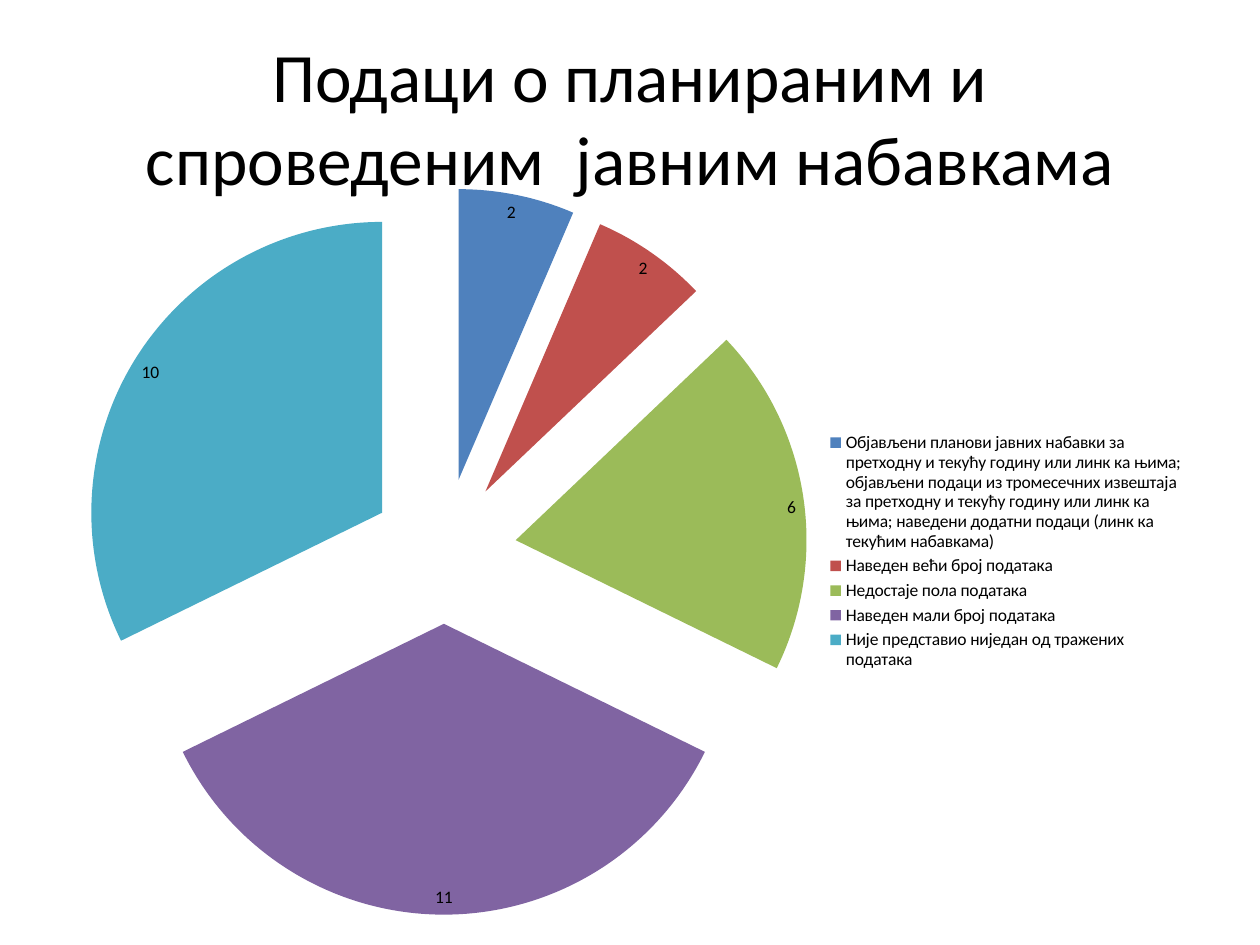
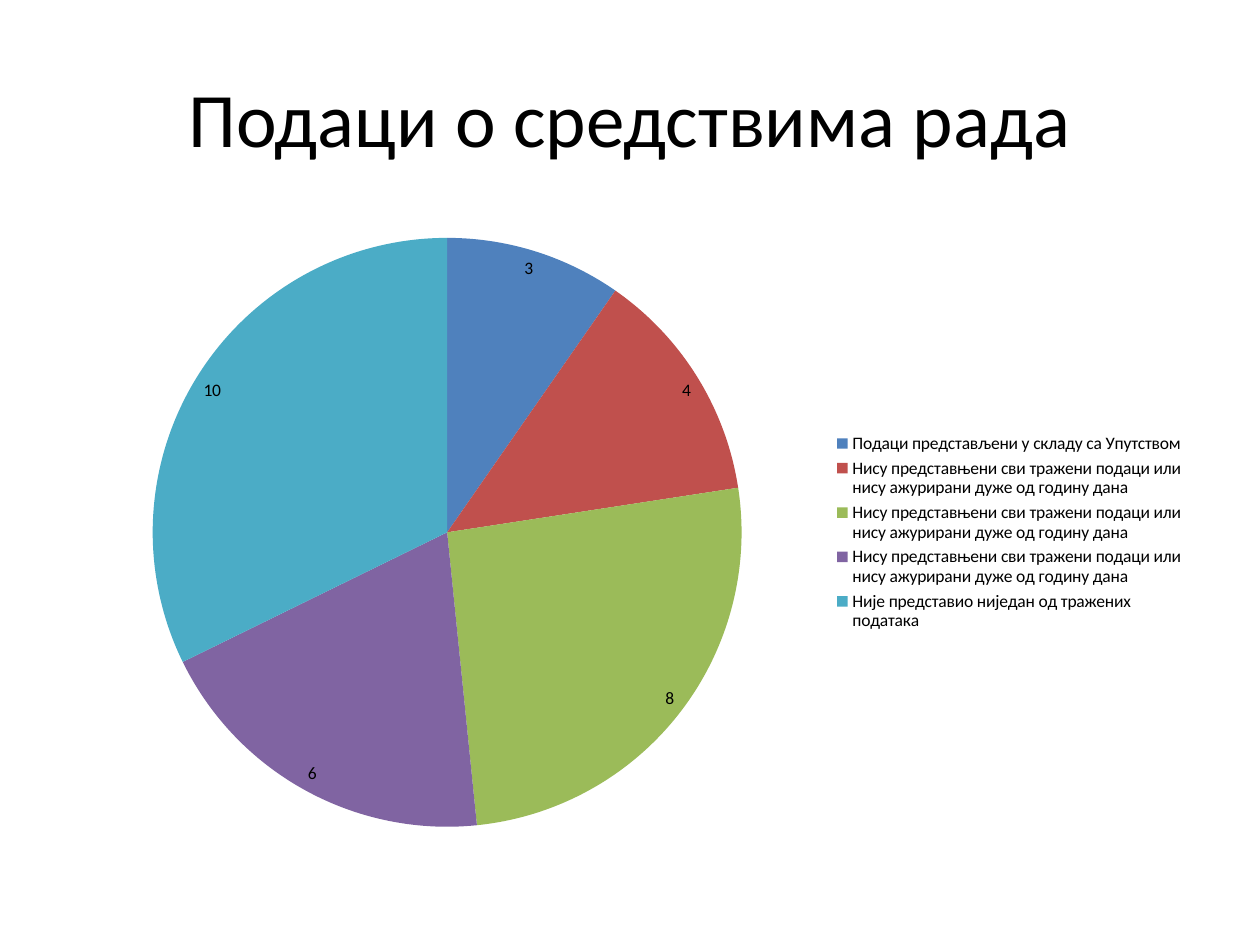
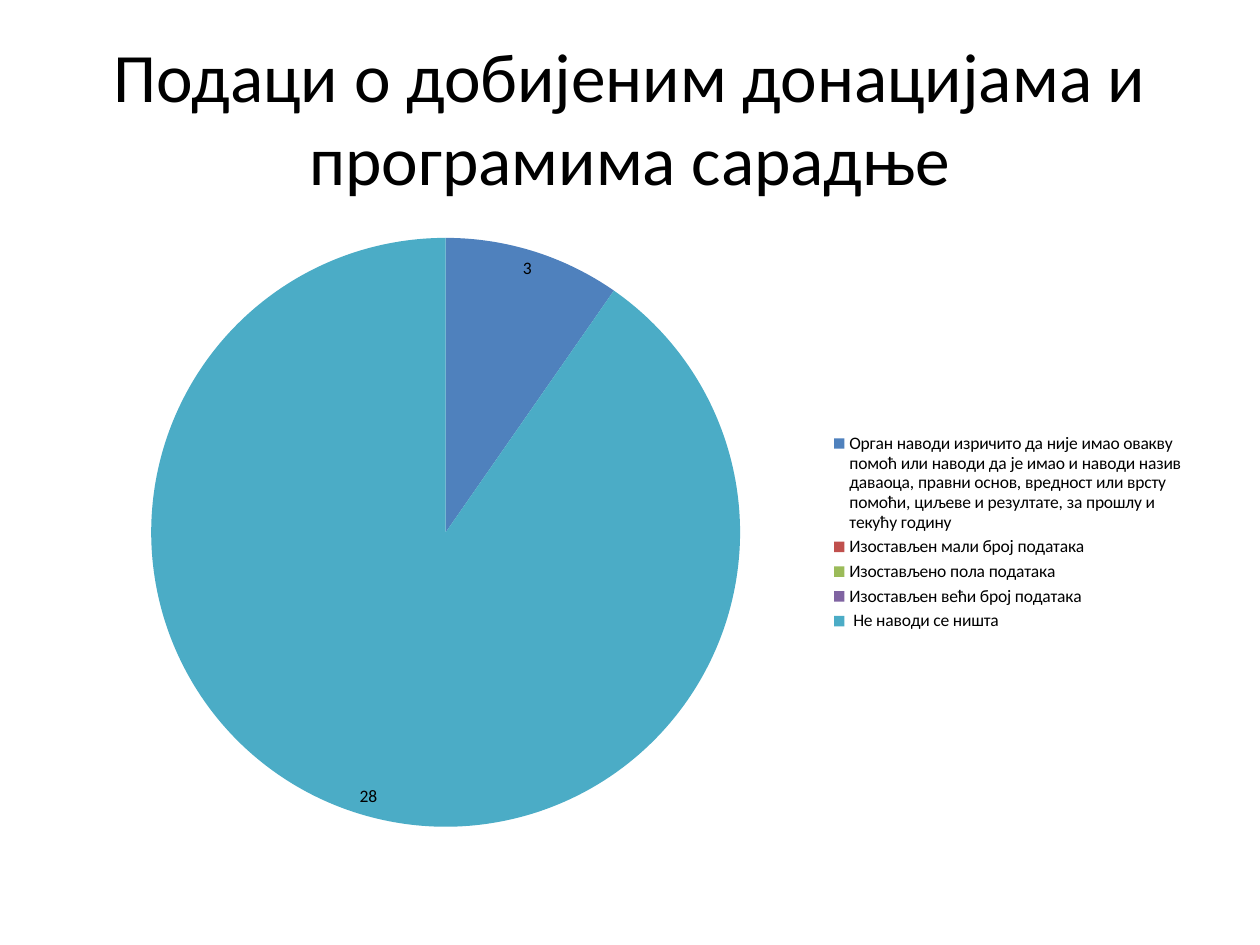
import pptx
import pptx.chart.data
import pptx.dml.color
import pptx.enum.chart
import pptx.enum.text
import pptx.oxml
import pptx.oxml.ns
import pptx.util

SCALE = 9144  # EMU per px, 100 px to the inch
TITLE_ONLY = 5
NO_DATA = "Није представио ниједан од тражених података"
OUTDATED = "Нису представњени сви тражени подаци или нису ажурирани дуже од годину дана"


def px(n):
    return pptx.util.Emu(n * SCALE)


def rgb(hex_color):
    return pptx.dml.color.RGBColor.from_string(hex_color)


class Deck:
    font = "Calibri"
    ink = "000000"
    slices = ["4F81BD", "C0504D", "9BBB59", "8064A2", "4BACC6"]

    def __init__(self):
        self.prs = pptx.Presentation()
        self.prs.slide_width = px(1000)
        self.prs.slide_height = px(750)
        self.slide = None

    def style(self, font, size):
        font.name = self.font
        font.size = pptx.util.Pt(size)
        font.color.rgb = rgb(self.ink)

    def add_slide(self):
        layout = self.prs.slide_layouts[TITLE_ONLY]
        self.slide = self.prs.slides.add_slide(layout)

    def title(self, text, size):
        sp = self.slide.shapes.title
        sp.left, sp.top, sp.width, sp.height = px(50), px(30), px(900), px(125)
        tf = sp.text_frame
        tf.text = text
        tf.word_wrap = True
        tf.auto_size = pptx.enum.text.MSO_AUTO_SIZE.NONE
        tf.vertical_anchor = pptx.enum.text.MSO_ANCHOR.MIDDLE
        p = tf.paragraphs[0]
        p.alignment = pptx.enum.text.PP_ALIGN.CENTER
        self.style(p.font, size)

    def pie(self, top, height, counts, explosion=0):
        data = pptx.chart.data.CategoryChartData()
        data.categories = [name for name, _ in counts]
        data.add_series("Series 1", [count for _, count in counts])
        chart = self.slide.shapes.add_chart(
            pptx.enum.chart.XL_CHART_TYPE.PIE,
            px(50), px(top), px(900), px(height), data).chart
        chart.has_title = False
        self.style(chart.font, 10)

        # Legend
        chart.has_legend = True
        chart.legend.position = pptx.enum.chart.XL_LEGEND_POSITION.RIGHT
        chart.legend.include_in_layout = False

        # Slices
        plot = chart.plots[0]
        plot.vary_by_categories = True
        series = plot.series[0]
        if explosion:
            ns = pptx.oxml.ns
            node = pptx.oxml.parse_xml(
                f'<c:explosion {ns.nsdecls("c")} val="{explosion}"/>')
            series._element.find(ns.qn("c:tx")).addnext(node)
        for i, color in enumerate(self.slices):
            fill = series.points[i].format.fill
            fill.solid()
            fill.fore_color.rgb = rgb(color)

        # Value labels; the format hides zeros
        labels = series.data_labels
        labels.show_value = True
        labels.number_format = "#"
        labels.number_format_is_linked = False
        labels.position = pptx.enum.chart.XL_LABEL_POSITION.INSIDE_END
        self.style(labels.font, 10)


def main():
    deck = Deck()

    # Public procurement
    deck.add_slide()
    deck.title("Подаци о планираним и спроведеним  јавним набавкама", 39.6)
    deck.pie(125, 625, [
        ("Објављени планови јавних набавки за претходну и текућу годину или "
         "линк ка њима; објављени подаци из тромесечних извештаја за претходну "
         "и текућу годину или линк ка њима; наведени додатни подаци (линк ка "
         "текућим набавкама)", 2),
        ("Наведен већи број података", 2),
        ("Недостаје пола података", 6),
        ("Наведен мали број података", 11),
        (NO_DATA, 10),
    ], explosion=25)

    # Means of work
    deck.add_slide()
    deck.title("Подаци о средствима рада", 44)
    deck.pie(175, 495, [
        ("Подаци представљени у складу са Упутством", 3),
        (OUTDATED, 4),
        (OUTDATED, 8),
        (OUTDATED, 6),
        (NO_DATA, 10),
    ])

    # Donations and cooperation programmes
    deck.add_slide()
    deck.title("Подаци о добијеним донацијама и програмима сарадње", 39.6)
    deck.pie(175, 495, [
        ("Орган наводи изричито да није имао овакву помоћ или наводи да је "
         "имао и наводи назив даваоца, правни основ, вредност или врсту "
         "помоћи, циљеве и резултате, за прошлу и текућу годину", 3),
        ("Изостављен мали број података", 0),
        ("Изостављено пола података", 0),
        ("Изостављен већи број података", 0),
        (" Не наводи се ништа", 28),
    ])

    deck.prs.save("out.pptx")


if __name__ == "__main__":
    main()
